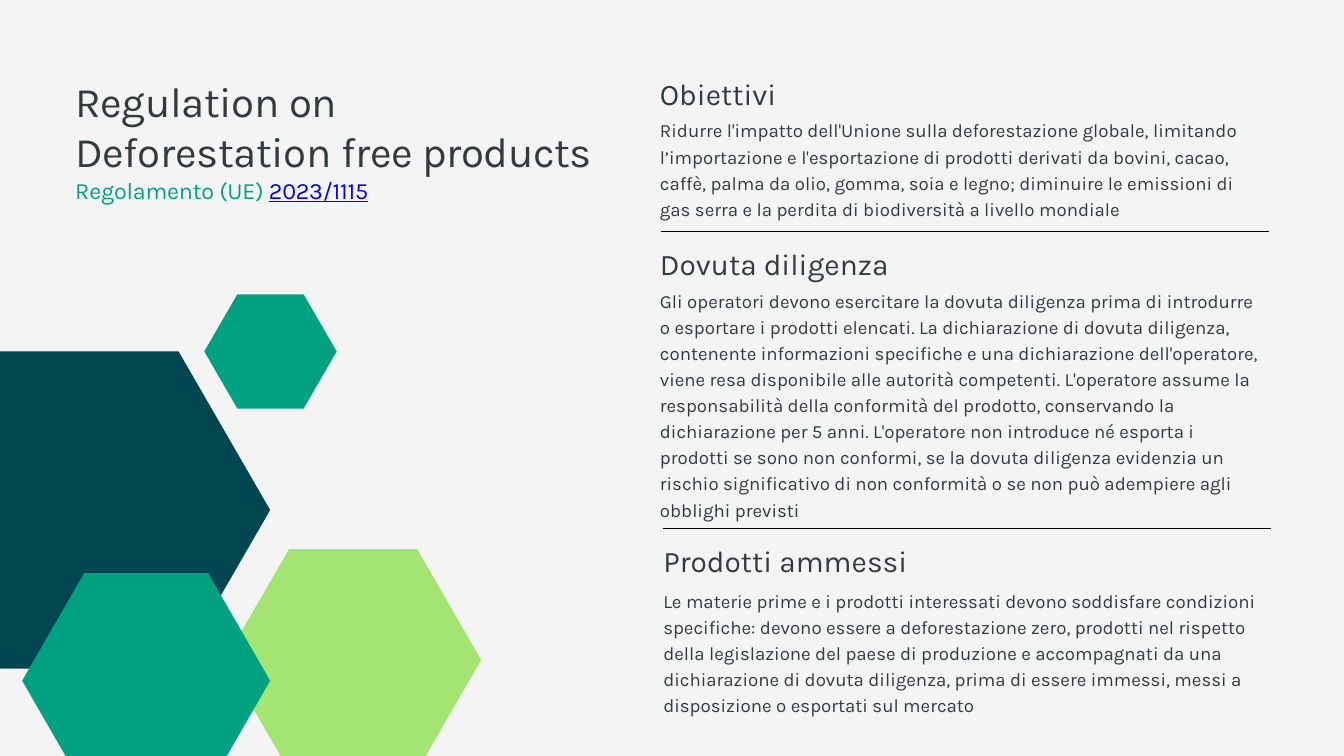
from lxml.etree import SubElement
from pptx import Presentation
from pptx.dml.color import RGBColor as RGB
from pptx.enum.shapes import MSO_CONNECTOR as Link
from pptx.oxml.ns import qn
from pptx.util import Inches, Pt

HUES = {
    "back": "F4F4F4",
    "ink": "333A3B",
    "green": "00A181",
    "navy": "004651",
    "lime": "A4E473",
    "blue": "0000FF",
    "line": "000000",
}

deck = Presentation()
deck.slide_width = Inches(20)
deck.slide_height = Inches(11.25)
slide = deck.slides.add_slide(deck.slide_layouts[6])
slide.background.fill.solid()
slide.background.fill.fore_color.rgb = RGB.from_string(HUES["back"])


def add_box(left, top, width, height):
    frame = slide.shapes.add_textbox(*map(Inches, (left, top, width, height))).text_frame
    frame.word_wrap = True
    frame.margin_left = frame.margin_right = 0
    frame.margin_top = frame.margin_bottom = 0
    return frame


def style(para, size, lead, hue):
    para.line_spacing = Pt(lead)
    para.font.name = "Karla"
    para.font.size = Pt(size)
    para.font.color.rgb = RGB.from_string(HUES[hue])


frame = add_box(1.12, 1.12, 7.84, 1.91)
title = frame.paragraphs[0]
title.text = "Regulation on\vDeforestation free products"
style(title, 45, 54, "ink")
law = frame.add_paragraph()
law.add_run().text = "Regolamento (UE) "
code = law.add_run()
code.text = "2023/1115"
style(law, 25, 30, "green")
code.font.color.rgb = RGB.from_string(HUES["blue"])
code.font.underline = True
for para, gap in ((title, -40), (law, -20)):
    for run in para.runs:
        run.font._element.set("spc", str(gap))

hexes = [
    (-1.43, 5.23, 5.45, 4.72, "navy"),
    (3.35, 8.17, 3.81, 3.3, "lime"),
    (3.04, 4.38, 1.97, 1.7, "green"),
    (0.33, 8.53, 3.69, 3.2, "green"),
]
for left, top, wide, high, hue in hexes:
    spots = [(0.25, 0), (0.75, 0), (1, 0.5), (0.75, 1), (0.25, 1)]
    points = [(Inches(left + x * wide), Inches(top + y * high)) for x, y in spots]
    path = slide.shapes.build_freeform(Inches(left), Inches(top + high / 2))
    path.add_line_segments(points, close=True)
    shape = path.convert_to_shape()
    shape.shadow.inherit = False
    shape.fill.solid()
    shape.fill.fore_color.rgb = RGB.from_string(HUES[hue])
    shape.line.fill.background()

WIDE = 9.05
parts = [
    (9.82, 1.12, 1.72, 1.55, "Obiettivi",
     "Ridurre l'impatto dell'Unione sulla deforestazione globale, limitando "
     "l’importazione e l'esportazione di prodotti derivati da bovini, cacao, caffè, "
     "palma da olio, gomma, soia e legno; diminuire le emissioni di gas serra e la "
     "perdita di biodiversità a livello mondiale"),
    (9.82, 3.66, 4.25, 3.51, "Dovuta diligenza",
     "Gli operatori devono esercitare la dovuta diligenza prima di introdurre o "
     "esportare i prodotti elencati. La dichiarazione di dovuta diligenza, contenente "
     "informazioni specifiche e una dichiarazione dell'operatore, viene resa "
     "disponibile alle autorità competenti. L'operatore assume la responsabilità della "
     "conformità del prodotto, conservando la dichiarazione per 5 anni. L'operatore non "
     "introduce né esporta i prodotti se sono non conformi, se la dovuta diligenza "
     "evidenzia un rischio significativo di non conformità o se non può adempiere agli "
     "obblighi previsti"),
    (9.87, 8.08, 8.72, 1.92, "Prodotti ammessi",
     "Le materie prime e i prodotti interessati devono soddisfare condizioni "
     "specifiche: devono essere a deforestazione zero, prodotti nel rispetto della "
     "legislazione del paese di produzione e accompagnati da una dichiarazione di "
     "dovuta diligenza, prima di essere immessi, messi a disposizione o esportati sul "
     "mercato"),
]
for left, top, low, high, head, body in parts:
    para = add_box(left, top, WIDE, 0.54).paragraphs[0]
    para.text = head
    style(para, 32, 38.4, "ink")
    para = add_box(left, low, WIDE, high).paragraphs[0]
    para.text = body
    style(para, 20, 28, "ink")

for left, top in ((9.83, 3.45), (9.87, 7.87)):
    ends = map(Inches, (left, top, left + WIDE, top))
    rule = slide.shapes.add_connector(Link.STRAIGHT, *ends)
    rule.line.color.rgb = RGB.from_string(HUES["line"])
    rule.line.width = Pt(0.75)
    SubElement(rule._element.spPr, qn("a:effectLst"))

deck.save("out.pptx")
